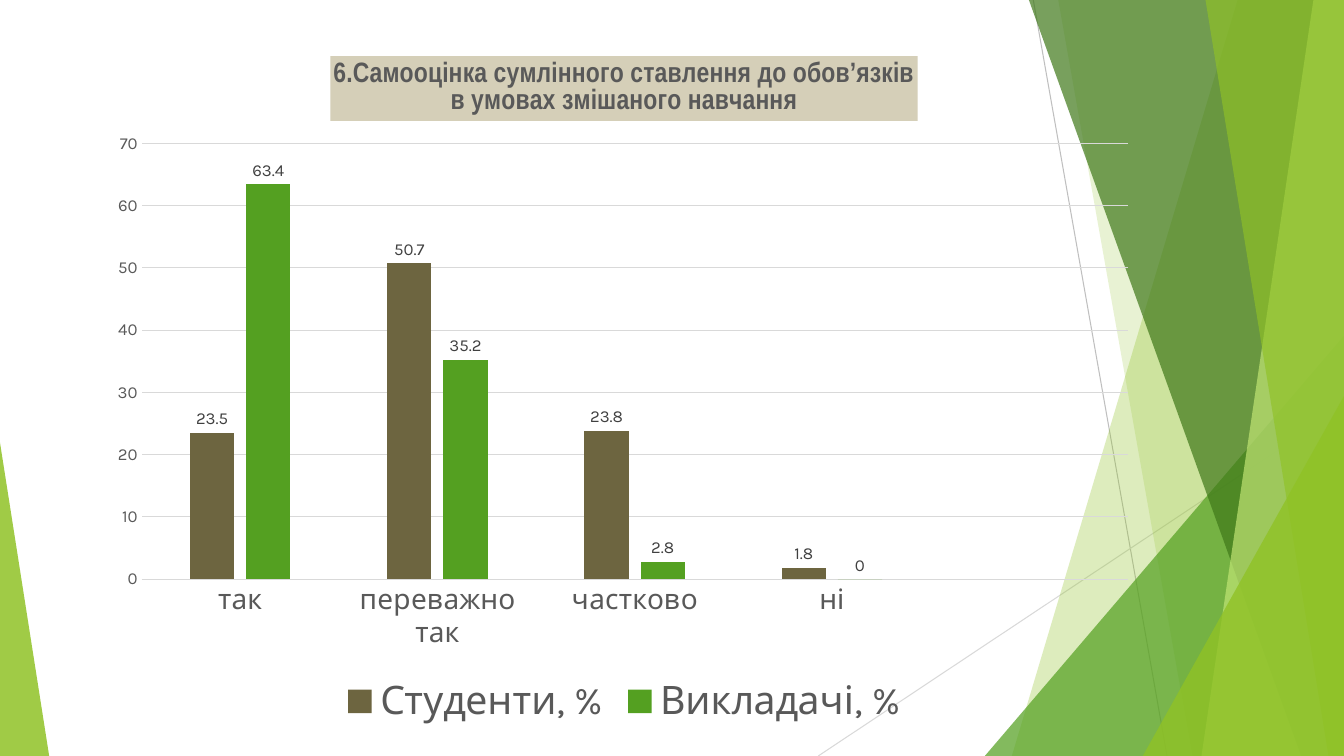
from lxml.etree import SubElement
from pptx import Presentation
from pptx.chart.data import CategoryChartData
from pptx.dml.color import RGBColor
from pptx.enum.chart import XL_CHART_TYPE as ChartType
from pptx.enum.chart import XL_LABEL_POSITION as LabelPosition
from pptx.enum.chart import XL_LEGEND_POSITION as LegendPosition
from pptx.enum.chart import XL_TICK_MARK as TickMark
from pptx.enum.shapes import MSO_CONNECTOR as Connector
from pptx.enum.shapes import MSO_SHAPE as Shape
from pptx.oxml import parse_xml
from pptx.oxml.ns import nsdecls, qn
from pptx.util import Cm, Pt

WIDTH, HEIGHT = 33.87, 19.05
GREY, LIGHT_GREY = "595959", "D9D9D9"
TITLE_LINES = ["6.Самооцінка сумлінного ставлення до обов’язків",
               "в умовах змішаного навчання"]
CATEGORIES = ["так", "переважно так", "частково", "ні", ""]
SERIES = [("Студенти, %", [23.5, 50.7, 23.8, 1.8, None], "6D6540"),
          ("Викладачі, %", [63.4, 35.2, 2.8, 0, None], "54A021")]


def color(value):
    return RGBColor.from_string(value)


def set_fill(target, value, opacity=100):
    target.fill.solid()
    target.fill.fore_color.rgb = color(value)
    if opacity < 100:
        srgb = target.fill._xPr.find(".//" + qn("a:srgbClr"))
        SubElement(srgb, qn("a:alpha"), val=str(opacity * 1000))


def set_line(line, value):
    line.color.rgb = color(value)
    line.width = Pt(0.75)


def set_font(font, size, value, name="Karla", bold=False):
    for key, setting in {"size": Pt(size), "name": name, "bold": bold}.items():
        setattr(font, key, setting)
    font.color.rgb = color(value)


def set_layout(parent, inner=False, **fractions):
    """Fix the place of a chart part as fractions of the chart."""
    layout = parent.find(qn("c:layout"))
    if layout is None:
        layout = parse_xml(f"<c:layout {nsdecls('c')}/>")
        parent.insert(0, layout)
    manual = SubElement(layout, qn("c:manualLayout"))
    if inner:
        SubElement(manual, qn("c:layoutTarget"), val="inner")
    for key in ("x", "y"):
        SubElement(manual, qn(f"c:{key}Mode"), val="edge")
    for key, value in fractions.items():
        SubElement(manual, qn(f"c:{key}"), val=str(value))


def add_facets(slide, left, top, width, height):
    """Green facets and thin lines at both sides of the slide."""
    shapes = slide.shapes
    right, bottom = left + width, top + height

    def finish(shape, value, opacity):
        shape.shadow.inherit = False
        set_fill(shape, value, opacity)
        shape.line.fill.background()

    def add_panel(top_x, bottom_x, value, opacity):
        builder = shapes.build_freeform(Cm(left + top_x), Cm(top), scale=1.0)
        corners = [(right, top), (right, bottom), (left + bottom_x, bottom)]
        builder.add_line_segments([(Cm(x), Cm(y)) for x, y in corners], close=True)
        finish(builder.convert_to_shape(), value, opacity)

    def add_triangle(x, y, base, apex, value, opacity):
        shape = shapes.add_shape(Shape.ISOSCELES_TRIANGLE, Cm(left + x), Cm(top + y),
                                 Cm(base), Cm(height - y))
        shape.adjustments[0] = apex
        finish(shape, value, opacity)

    # Thin lines
    for x1, y1, x2, value in [(26.04, 0, 29.41, "BFBFBF"),
                              (width, 10.24, 20.62, LIGHT_GREY)]:
        line = shapes.add_connector(Connector.STRAIGHT, Cm(left + x1), Cm(top + y1),
                                    Cm(left + x2), Cm(bottom))
        set_line(line.line, value)
        SubElement(line._element.spPr, qn("a:effectLst"))

    # Overlapping facets, from back to front
    add_panel(31.19, 25.5, "90C226", 30)
    add_panel(26.67, 30.05, "90C226", 20)
    add_triangle(24.82, 8.46, width - 24.82, 1, "54A021", 72)
    add_panel(25.93, 32.79, "3F7819", 70)
    add_panel(33.1, 30.28, "C0E474", 70)
    add_panel(30.38, 33.48, "90C226", 65)
    add_triangle(28.8, 9.98, width - 28.8, 1, "90C226", 80)
    add_triangle(0, 11.15, 1.24, 0, "90C226", 85)


def format_title(chart):
    title = chart.chart_title
    frame = title.text_frame
    for index, text in enumerate(TITLE_LINES):
        paragraph = frame.add_paragraph() if index else frame.paragraphs[0]
        run = paragraph.add_run()
        run.text = text
        set_font(run.font, 20, GREY, "Arial Narrow", True)
    set_fill(title.format, "D5CFB8")
    set_layout(title._element, x=0.22, y=0.03)


def format_axes(chart):
    for axis, size in [(chart.category_axis, 20), (chart.value_axis, 12)]:
        axis.major_tick_mark = axis.minor_tick_mark = TickMark.NONE
        set_font(axis.tick_labels.font, size, GREY)
    set_line(chart.category_axis.format.line, LIGHT_GREY)
    values = chart.value_axis
    scale = {"minimum_scale": 0, "maximum_scale": 70, "major_unit": 10}
    for key, setting in scale.items():
        setattr(values, key, setting)
    values.format.line.fill.background()
    set_line(values.major_gridlines.format.line, LIGHT_GREY)


def add_survey_chart(slide, left, top, width, height):
    """Column chart with its title, labels and legend."""
    data = CategoryChartData()
    data.categories = CATEGORIES
    for name, values, _ in SERIES:
        data.add_series(name, values)
    chart = slide.shapes.add_chart(ChartType.COLUMN_CLUSTERED, Cm(left), Cm(top),
                                   Cm(width), Cm(height), data).chart
    set_font(chart.font, 10, "000000")
    format_title(chart)
    format_axes(chart)

    # Columns and value labels
    plot = chart.plots[0]
    for key, setting in {"gap_width": 219, "overlap": -27,
                         "vary_by_categories": False}.items():
        setattr(plot, key, setting)
    for series, (_, _, value) in zip(plot.series, SERIES):
        set_fill(series.format, value)
        labels = series.data_labels
        labels.show_value = True
        labels.position = LabelPosition.OUTSIDE_END
        set_font(labels.font, 12, "404040")
    set_layout(chart._chartSpace.chart.plotArea, True, x=0.04, y=0.155, w=0.94, h=0.626)

    # Legend
    chart.has_legend = True
    chart.legend.position = LegendPosition.BOTTOM
    chart.legend.include_in_layout = False
    set_font(chart.legend.font, 28, GREY)


def main():
    presentation = Presentation()
    presentation.slide_width, presentation.slide_height = Cm(WIDTH), Cm(HEIGHT)
    slide = presentation.slides.add_slide(presentation.slide_layouts[6])
    add_facets(slide, 0, 0, WIDTH, HEIGHT)
    add_survey_chart(slide, 2.51, 0.89, 26.44, 17.55)
    presentation.save("out.pptx")


if __name__ == "__main__":
    main()
